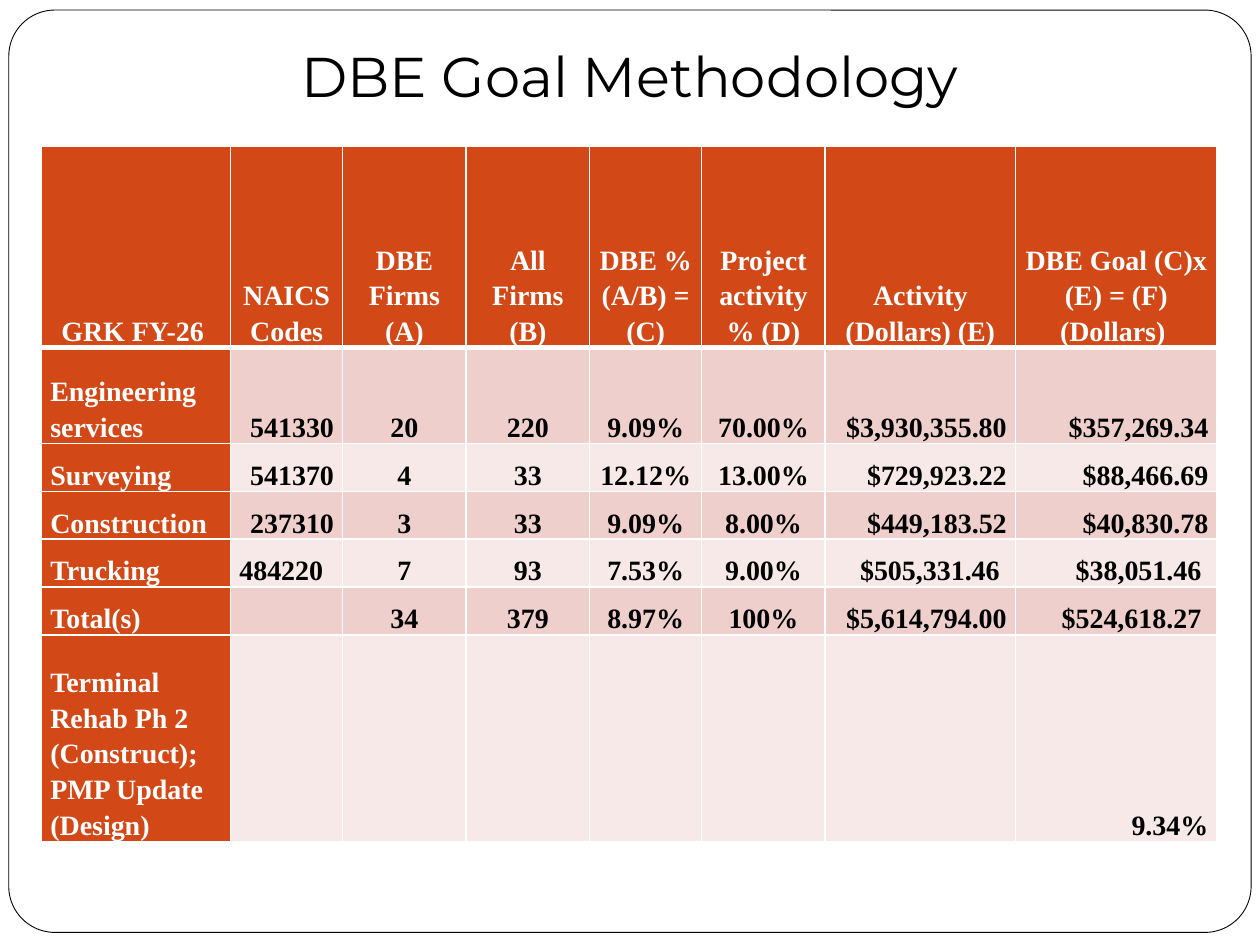
from dataclasses import dataclass

from lxml.etree import SubElement
from pptx import Presentation
from pptx.dml.color import RGBColor
from pptx.enum.shapes import MSO_SHAPE
from pptx.enum.text import MSO_ANCHOR, PP_ALIGN
from pptx.oxml.ns import qn
from pptx.util import Inches, Pt


@dataclass(frozen=True)
class Theme:
    white: str = "FFFFFF"
    ink: str = "000000"
    rust: str = "D34817"
    bands: tuple = ("EFCFCC", "F7E9E8")
    head: str = "Montserrat"
    body: str = "Times New Roman"
    large: int = 32
    small: int = 16
    rule: int = 1
    thick: int = 3


LEFT, MID, RIGHT = PP_ALIGN.LEFT, PP_ALIGN.CENTER, PP_ALIGN.RIGHT
WIDTHS = [1.5, 0.89, 0.98, 0.98, 0.89, 0.98, 1.51, 1.6]
HEIGHTS = [1.6, 0.76, 0.38, 0.38, 0.38, 0.38, 1.64]
ALIGNS = [LEFT, RIGHT, MID, MID, MID, MID, RIGHT, RIGHT]
ROWS = [
    ["GRK FY-26 ", "NAICS Codes", "DBE Firms (A)", "All Firms (B)", "DBE % (A/B) = (C)",
     "Project activity % (D)", "Activity (Dollars) (E)", "DBE Goal (C)x (E) = (F) (Dollars) "],
    ["Engineering services", "541330", "20", "220", "9.09%", "70.00%", "$3,930,355.80", "$357,269.34"],
    ["Surveying", "541370", "4", "33", "12.12%", "13.00%", "$729,923.22", "$88,466.69"],
    ["Construction", "237310", "3", "33", "9.09%", "8.00%", "$449,183.52", "$40,830.78"],
    ["Trucking", "484220", "7", "93", "7.53%", "9.00%", " $505,331.46 ", " $38,051.46 "],
    ["Total(s)", "", "34", "379", "8.97%", "100%", " $5,614,794.00 ", " $524,618.27 "],
    ["Terminal Rehab Ph 2 (Construct); PMP Update (Design)", "", "", "", "", "", "", "9.34%"],
]


class Deck:
    """Draw styled elements on the current slide."""

    def __init__(self, theme):
        self.theme = theme
        self.prs = Presentation()
        self.prs.slide_width, self.prs.slide_height = Inches(10), Inches(7.5)
        self.slide = self.prs.slides.add_slide(self.prs.slide_layouts[6])

    def paint(self, fill, color):
        fill.solid()
        fill.fore_color.rgb = RGBColor.from_string(color)

    def letter(self, para, text, face, size, color, bold=False):
        run = para.add_run()
        run.text = text
        run.font.name, run.font.size, run.font.bold = face, Pt(size), bold
        run.font.color.rgb = RGBColor.from_string(color)

    def frame(self, left, top, width, height):
        box = self.slide.shapes.add_shape(
            MSO_SHAPE.ROUNDED_RECTANGLE, Inches(left), Inches(top), Inches(width), Inches(height))
        box.adjustments[0] = 0.05
        box.shadow.inherit = False
        self.paint(box.fill, self.theme.white)
        self.paint(box.line.fill, self.theme.ink)
        box.line.width = Pt(0.5)

    def title(self, text, left, top, width, height):
        box = self.slide.shapes.add_textbox(Inches(left), Inches(top), Inches(width), Inches(height))
        box.text_frame.word_wrap = True
        para = box.text_frame.paragraphs[0]
        para.alignment = MID
        self.letter(para, text, self.theme.head, self.theme.large, self.theme.ink)

    def border(self, cell, row):
        props = cell._tc.get_or_add_tcPr()
        thick = {0: "lnB", 1: "lnT"}.get(row)
        for spot, side in enumerate(("lnL", "lnR", "lnT", "lnB")):
            size = self.theme.thick if side == thick else self.theme.rule
            line = SubElement(props, qn(f"a:{side}"), w=str(Pt(size)))
            fill = SubElement(line, qn("a:solidFill"))
            SubElement(fill, qn("a:srgbClr"), val=self.theme.white)
            props.insert(spot, line)

    def cell(self, cell, text, row, col):
        look = self.theme
        label = row == 0 or col == 0
        cell.margin_left = cell.margin_right = Inches(0.07)
        cell.margin_top = cell.margin_bottom = 0
        cell.vertical_anchor = MSO_ANCHOR.BOTTOM
        self.paint(cell.fill, look.rust if label else look.bands[(row - 1) % 2])
        self.border(cell, row)
        if text:
            para = cell.text_frame.paragraphs[0]
            para.line_spacing = 1.15
            para.alignment = MID if row == 0 else LEFT if text == "484220" else ALIGNS[col]
            self.letter(para, text, look.body, look.small, look.white if label else look.ink, True)

    def table(self, rows, left, top):
        grid = self.slide.shapes.add_table(
            len(rows), len(WIDTHS), Inches(left), Inches(top),
            Inches(sum(WIDTHS)), Inches(sum(HEIGHTS))).table
        for column, width in zip(grid.columns, WIDTHS):
            column.width = Inches(width)
        for line, height in zip(grid.rows, HEIGHTS):
            line.height = Inches(height)
        for row, texts in enumerate(rows):
            for col, text in enumerate(texts):
                self.cell(grid.cell(row, col), text, row, col)


def main():
    deck = Deck(Theme())
    deck.frame(0.07, 0.08, 9.86, 7.32)
    deck.title("DBE Goal Methodology", 1, 0.28, 8, 0.64)
    deck.table(ROWS, 0.33, 1.16)
    deck.prs.save("out.pptx")


if __name__ == "__main__":
    main()
